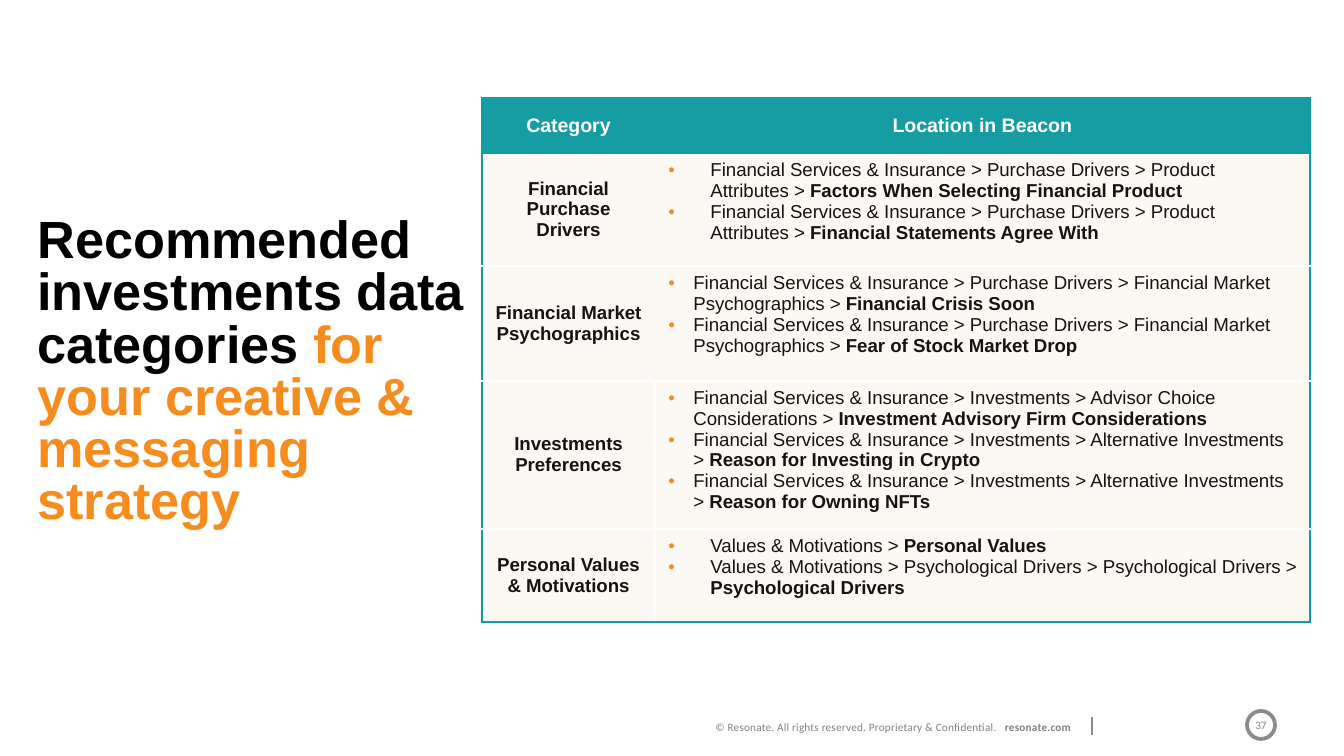
from dataclasses import dataclass
from typing import Any, Optional

from lxml.etree import SubElement
from pptx import Presentation
from pptx.dml.color import RGBColor
from pptx.enum.shapes import MSO_CONNECTOR, MSO_SHAPE
from pptx.enum.text import MSO_ANCHOR, MSO_AUTO_SIZE, PP_ALIGN
from pptx.oxml.ns import qn
from pptx.util import Emu, Pt

EMU_PER_PX = 914400 / 134.4
COLORS = {
    "black": "000000",
    "orange": "F68C1E",
    "teal": "169CA3",
    "edge": "119CA3",
    "cream": "FCF8F3",
    "ink": "141414",
    "white": "FFFFFF",
    "gray": "808080",
    "ring": "8A8A8A",
}


@dataclass(frozen=True)
class Span:
    text: str
    color: str
    size: float
    bold: bool = False
    font: str = "Arial"
    spacing: int = 0


@dataclass(frozen=True)
class Category:
    name: str
    height: int
    indent: int
    divided: bool
    locations: tuple[tuple[str, str], ...]


SERVICES = "Financial Services & Insurance > "
ATTRIBUTES = SERVICES + "Purchase Drivers > Product Attributes > "
PSYCHOGRAPHICS = SERVICES + "Purchase Drivers > Financial Market Psychographics > "
ADVISOR = SERVICES + "Investments > Advisor Choice Considerations > "
ALTERNATIVE = SERVICES + "Investments > Alternative Investments > "
VALUES = "Values & Motivations > "

HEADER_HEIGHT = 55
COLUMN_WIDTHS = (173, 655)
CATEGORIES = (
    Category("Financial Purchase Drivers", 113, 42, False, (
        (ATTRIBUTES, "Factors When Selecting Financial Product"),
        (ATTRIBUTES, "Financial Statements Agree With"),
    )),
    Category("Financial Market Psychographics", 115, 25, False, (
        (PSYCHOGRAPHICS, "Financial Crisis Soon"),
        (PSYCHOGRAPHICS, "Fear of Stock Market Drop"),
    )),
    Category("Investments Preferences", 148, 25, True, (
        (ADVISOR, "Investment Advisory Firm Considerations"),
        (ALTERNATIVE, "Reason for Investing in Crypto"),
        (ALTERNATIVE, "Reason for Owning NFTs"),
    )),
    Category("Personal Values & Motivations", 93, 42, True, (
        (VALUES, "Personal Values"),
        (VALUES + "Psychological Drivers > Psychological Drivers > ", "Psychological Drivers"),
    )),
)


def px(length: int) -> Emu:
    return Emu(round(length * EMU_PER_PX))


def rgb(color: str) -> RGBColor:
    return RGBColor.from_string(COLORS[color])


def set_format(target: Any, values: dict[str, Any]) -> None:
    for name, value in values.items():
        setattr(target, name, value)


def write_spans(para: Any, spans: tuple[Span, ...], align: PP_ALIGN) -> None:
    para.alignment = align
    for span in spans:
        run = para.add_run()
        run.text = span.text
        set_format(run.font, {"name": span.font, "size": Pt(span.size), "bold": span.bold})
        run.font.color.rgb = rgb(span.color)
        if span.spacing:
            run.font._element.set("spc", str(span.spacing))


def add_bullet(para: Any, indent: int) -> None:
    properties = para._p.get_or_add_pPr()
    properties.set("marL", str(px(indent)))
    properties.set("indent", str(-px(indent)))
    bullet_color = SubElement(properties, qn("a:buClr"))
    SubElement(bullet_color, qn("a:srgbClr"), val=COLORS["orange"])
    SubElement(properties, qn("a:buFont"), typeface="Arial")
    SubElement(properties, qn("a:buChar"), char="•")


def set_border(cell: Any, side: str, color: Optional[str]) -> None:
    width = Pt(1) if color == "white" else Pt(0.75)
    line = SubElement(cell._tc.get_or_add_tcPr(), qn(f"a:ln{side}"), w=str(width))
    if color is None:
        SubElement(line, qn("a:noFill"))
    else:
        fill = SubElement(line, qn("a:solidFill"))
        SubElement(fill, qn("a:srgbClr"), val=COLORS[color])


def style_cell(cell: Any, row: int, column: int, divided: bool) -> None:
    divider = "white" if divided else None
    borders = {
        "L": "edge" if column == 0 else divider,
        "R": "edge" if column == 1 else divider,
        "T": "edge" if row <= 1 else "white",
        "B": "edge" if row in (0, len(CATEGORIES)) else "white",
    }
    for side, color in borders.items():
        set_border(cell, side, color)
    cell.fill.solid()
    cell.fill.fore_color.rgb = rgb("teal" if row == 0 else "cream")


def add_category_table(slide: Any) -> None:
    heights = (HEADER_HEIGHT, *(category.height for category in CATEGORIES))
    frame = slide.shapes.add_table(
        len(heights), len(COLUMN_WIDTHS), px(482), px(98), px(sum(COLUMN_WIDTHS)), px(sum(heights))
    )
    table = frame.table
    table.horz_banding = False
    for column, width in zip(table.columns, COLUMN_WIDTHS):
        column.width = px(width)
    for row, height in zip(table.rows, heights):
        row.height = px(height)

    for column, heading in enumerate(("Category", "Location in Beacon")):
        cell = table.cell(0, column)
        style_cell(cell, 0, column, False)
        cell.vertical_anchor = MSO_ANCHOR.MIDDLE
        write_spans(cell.text_frame.paragraphs[0], (Span(heading, "white", 10.5, True),), PP_ALIGN.CENTER)

    for row, category in enumerate(CATEGORIES, start=1):
        name_cell, location_cell = table.cell(row, 0), table.cell(row, 1)
        style_cell(name_cell, row, 0, category.divided)
        style_cell(location_cell, row, 1, category.divided)
        name_cell.vertical_anchor = MSO_ANCHOR.MIDDLE
        write_spans(name_cell.text_frame.paragraphs[0], (Span(category.name, "ink", 10, True),), PP_ALIGN.CENTER)
        text = location_cell.text_frame
        for index, (trail, target) in enumerate(category.locations):
            para = text.add_paragraph() if index else text.paragraphs[0]
            add_bullet(para, category.indent)
            write_spans(para, (Span(trail, "ink", 10), Span(target, "ink", 10, True)), PP_ALIGN.LEFT)


def add_title(slide: Any) -> None:
    title = slide.shapes.title
    set_format(title, {"left": px(24), "top": px(210), "width": px(487), "height": px(301)})
    set_format(title.text_frame, {
        "word_wrap": True, "auto_size": MSO_AUTO_SIZE.NONE, "vertical_anchor": MSO_ANCHOR.TOP,
    })
    para = title.text_frame.paragraphs[0]
    para.line_spacing = Pt(28)
    write_spans(para, (
        Span("Recommended investments data categories ", "black", 28, True),
        Span("for your creative & messaging strategy", "orange", 28, True),
    ), PP_ALIGN.LEFT)


def add_footer(slide: Any) -> None:
    box = slide.shapes.add_textbox(px(-19), px(714), px(1103), px(27))
    box.text_frame.word_wrap = True
    write_spans(box.text_frame.paragraphs[0], (
        Span("© Resonate. All rights reserved. Proprietary & Confidential.", "gray", 6, False, "Calibri", 10),
        Span(" ", "gray", 6, False, "Calibri", 300),
        Span("resonate.com", "gray", 6, True, "Calibri", 10),
    ), PP_ALIGN.RIGHT)

    divider = slide.shapes.add_connector(MSO_CONNECTOR.STRAIGHT, px(1092), px(717), px(1092), px(735))
    divider.line.width = Pt(0.75)
    divider.line.color.rgb = rgb("ring")
    SubElement(divider._element.spPr, qn("a:effectLst"))

    badge = slide.shapes.add_shape(MSO_SHAPE.OVAL, px(1247), px(711), px(28), px(28))
    badge.shadow.inherit = False
    badge.fill.background()
    badge.line.width = Pt(2)
    badge.line.color.rgb = rgb("ring")
    set_format(badge.text_frame, {
        "word_wrap": False, "vertical_anchor": MSO_ANCHOR.MIDDLE,
        "margin_left": 0, "margin_right": 0, "margin_top": 0, "margin_bottom": 0,
    })
    write_spans(badge.text_frame.paragraphs[0], (Span("37", "ring", 6, False, "Calibri"),), PP_ALIGN.CENTER)


def main() -> None:
    deck = Presentation()
    set_format(deck, {"slide_width": px(1344), "slide_height": px(756)})
    slide = deck.slides.add_slide(deck.slide_layouts[5])
    add_footer(slide)
    add_title(slide)
    add_category_table(slide)
    deck.save("out.pptx")


if __name__ == "__main__":
    main()
